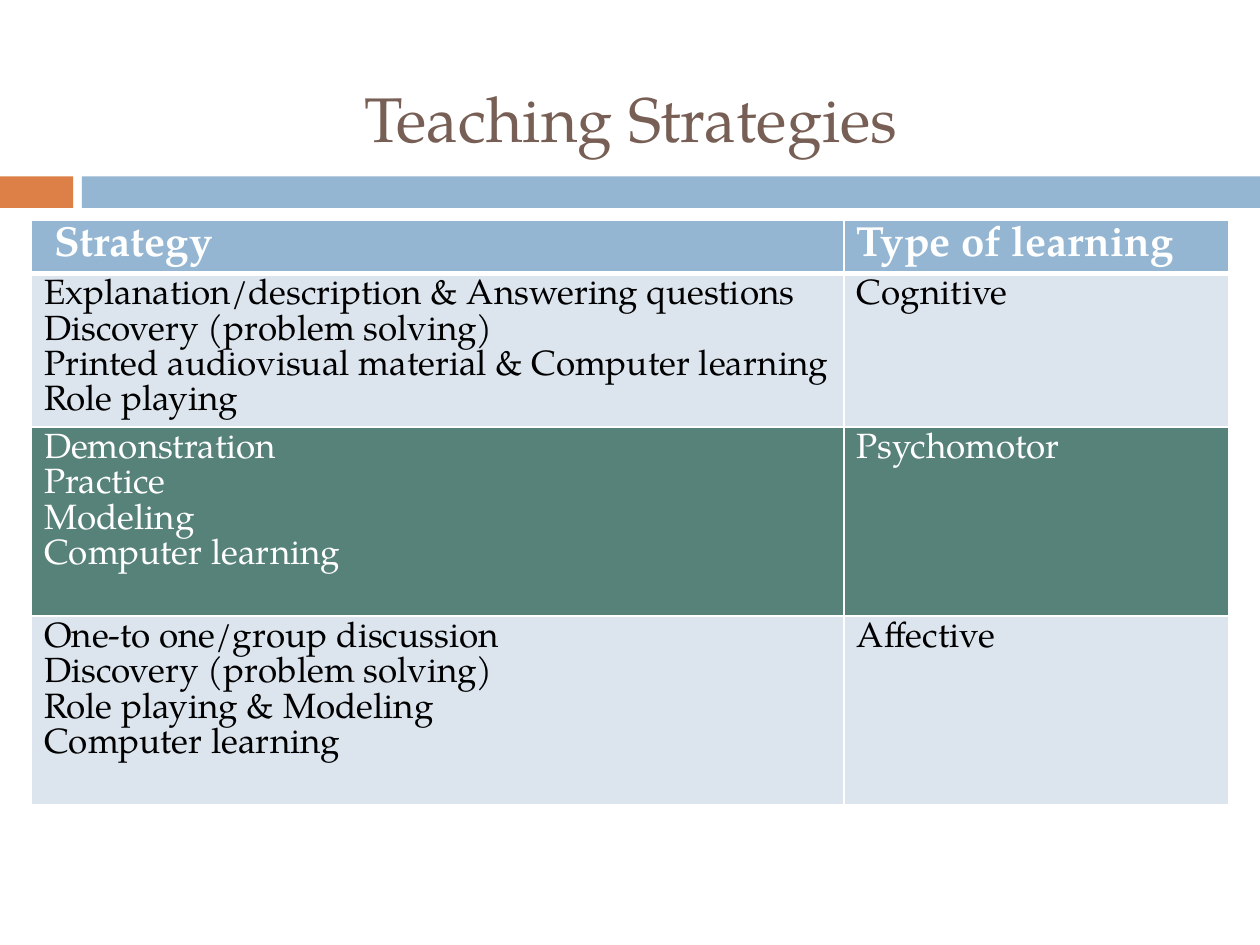
from lxml import etree
from pptx import Presentation
from pptx.dml.color import RGBColor
from pptx.enum.shapes import MSO_SHAPE
from pptx.enum.text import MSO_ANCHOR, PP_ALIGN
from pptx.oxml.ns import qn
from pptx.util import Inches, Pt

FONT = "TeX Gyre Pagella"
COLORS = {
    "orange": "DD8047", "blue": "94B6D2", "brown": "775F55",
    "pale": "DCE5EE", "green": "578279", "white": "FFFFFF", "black": "000000",
}


def set_font(p, size, color, bold=False):
    p.font.name = FONT
    p.font.size = Pt(size)
    p.font.bold = bold
    p.font.color.rgb = RGBColor.from_string(COLORS[color])


def add_borders(cell, bottom):
    """Draw white cell borders, 1 pt except for the given bottom width."""
    tc_pr = cell._tc.get_or_add_tcPr()
    widths = {"lnL": 1, "lnR": 1, "lnT": 1, "lnB": bottom}
    for i, (side, width) in enumerate(widths.items()):
        ln = etree.Element(qn(f"a:{side}"), w=str(Pt(width)))
        fill = etree.SubElement(ln, qn("a:solidFill"))
        etree.SubElement(fill, qn("a:srgbClr"), val=COLORS["white"])
        tc_pr.insert(i, ln)


prs = Presentation()
prs.slide_width, prs.slide_height = Inches(10), Inches(7.5)
s = prs.slides.add_slide(prs.slide_layouts[6])

# Accent bars
for left, width, color in [(0, 0.58, "orange"), (0.65, 9.35, "blue")]:
    sp = s.shapes.add_shape(MSO_SHAPE.RECTANGLE, Inches(left), Inches(1.4),
                            Inches(width), Inches(0.25))
    sp.shadow.inherit = False
    sp.fill.solid()
    sp.fill.fore_color.rgb = RGBColor.from_string(COLORS[color])
    sp.line.fill.background()

# Title
tf = s.shapes.add_textbox(Inches(0.17), Inches(0.53),
                          Inches(9.67), Inches(0.8)).text_frame
tf.word_wrap = True
tf.vertical_anchor = MSO_ANCHOR.MIDDLE
p = tf.paragraphs[0]
p.text = "Teaching Strategies"
p.alignment = PP_ALIGN.CENTER
set_font(p, 36, "brown")

# Strategy table: row height, fill, text colour, strategies, type of learning
rows = [
    (0.42, "blue", "white", [" Strategy"], "Type of learning"),
    (1.22, "pale", "black",
     ["Explanation/description & Answering questions",
      "Discovery (problem solving)",
      "Printed audiovisual material & Computer learning",
      "Role playing"], "Cognitive"),
    (1.5, "green", "white",
     ["Demonstration", "Practice", "Modeling", "Computer learning"],
     "Psychomotor"),
    (1.5, "pale", "black",
     ["One-to one/group discussion", "Discovery (problem solving)",
      "Role playing & Modeling", "Computer learning"], "Affective"),
]
table = s.shapes.add_table(len(rows), 2, Inches(0.25), Inches(1.75),
                           Inches(9.5), Inches(4.64)).table
for column, width in zip(table.columns, [6.45, 3.05]):
    column.width = Inches(width)

for i, (height, fill, color, strategies, learning) in enumerate(rows):
    header = i == 0
    size, spacing = (24, 23) if header else (20, 20.1)
    table.rows[i].height = Inches(height)
    for j, lines in enumerate([strategies, [learning]]):
        cell = table.cell(i, j)
        cell.fill.solid()
        cell.fill.fore_color.rgb = RGBColor.from_string(COLORS[fill])
        add_borders(cell, bottom=3 if header else 1)
        cell.text = "\n".join(lines)
        for p in cell.text_frame.paragraphs:
            p.alignment = PP_ALIGN.LEFT
            p.line_spacing = Pt(spacing)
            set_font(p, size, color, bold=header)

prs.save("out.pptx")
